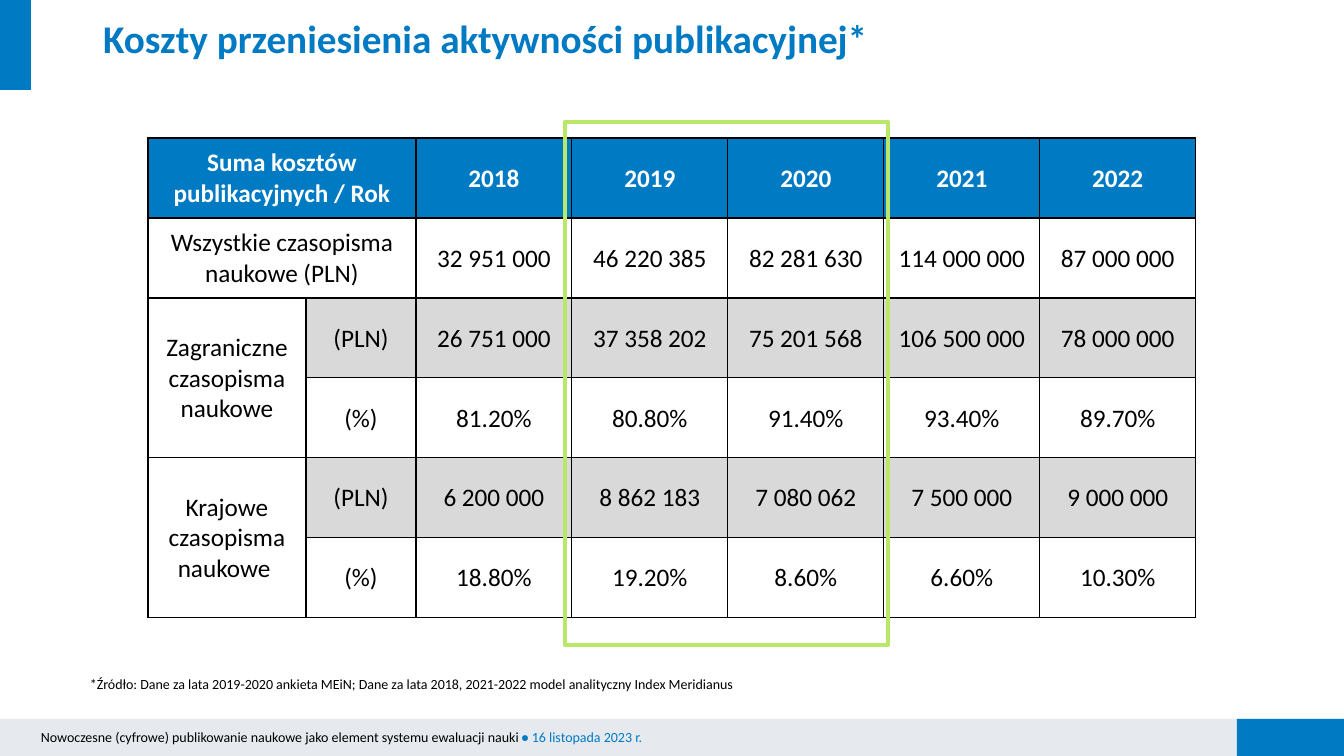
"""Builds a slide with a table of publication costs by year."""
from lxml import etree
from pptx import Presentation
from pptx.dml.color import RGBColor
from pptx.enum.shapes import MSO_SHAPE
from pptx.enum.text import MSO_ANCHOR, PP_ALIGN
from pptx.oxml.ns import qn
from pptx.util import Emu, Pt

RECTANGLE = MSO_SHAPE.RECTANGLE
TOP, MIDDLE = MSO_ANCHOR.TOP, MSO_ANCHOR.MIDDLE
LEFT, CENTER = PP_ALIGN.LEFT, PP_ALIGN.CENTER
EMU_PER_PX = 914400 / 100.8
FONT = "Calibri"
COLORS = {
    "blue": "007AC3",
    "bar": "E6EAEF",
    "band": "D9D9D9",
    "highlight": "BAE66A",
    "black": "000000",
    "white": "FFFFFF",
}
COLUMN_WIDTHS = [158, 110] + [156] * 5
ROW_HEIGHT = 80
ROWS = [
    ["Suma kosztów publikacyjnych / Rok", None, "2018", "2019", "2020", "2021", "2022"],
    ["Wszystkie czasopisma naukowe (PLN)", None,
     "32 951 000", "46 220 385", "82 281 630", "114 000 000", "87 000 000"],
    ["Zagraniczne czasopisma naukowe", "(PLN)",
     "26 751 000", "37 358 202", "75 201 568", "106 500 000", "78 000 000"],
    [None, "(%)", "81.20%", "80.80%", "91.40%", "93.40%", "89.70%"],
    ["Krajowe czasopisma naukowe ", "(PLN)",
     "6 200 000", "8 862 183", "7 080 062", "7 500 000", "9 000 000"],
    [None, "(%)", "18.80%", "19.20%", "8.60%", "6.60%", "10.30%"],
]
MERGES = [((0, 0), (0, 1)), ((1, 0), (1, 1)), ((2, 0), (3, 0)), ((4, 0), (5, 0))]


def px(value):
    return Emu(round(value * EMU_PER_PX))


def color(name):
    return RGBColor.from_string(COLORS[name])


def add_span(para, text, size, color_name, bold=False):
    span = para.add_run()
    span.text = text
    span.font.name = FONT
    span.font.size = Pt(size)
    span.font.bold = bold
    span.font.color.rgb = color(color_name)


def add_rectangle(page, left, top, width, height, fill=None, line=None):
    box = page.shapes.add_shape(RECTANGLE, px(left), px(top), px(width), px(height))
    box.shadow.inherit = False
    if fill:
        box.fill.solid()
        box.fill.fore_color.rgb = color(fill)
    else:
        box.fill.background()
    if line:
        box.line.color.rgb = color(line)
        box.line.width = Pt(3)
    else:
        box.line.fill.background()


def add_text(page, left, top, width, height, spans, line_spacing=1.0):
    box = page.shapes.add_textbox(px(left), px(top), px(width), px(height))
    box.text_frame.word_wrap = True
    para = box.text_frame.paragraphs[0]
    para.line_spacing = line_spacing
    for span in spans:
        add_span(para, *span)


def set_title(page, text):
    title = page.shapes.title
    title.left, title.top, title.width, title.height = map(px, (93, 15, 1251, 96))
    title.text_frame.vertical_anchor = TOP
    para = title.text_frame.paragraphs[0]
    para.alignment = LEFT
    para.line_spacing = 0.9
    add_span(para, text, 28, "blue", True)


def set_borders(cell):
    properties = cell._tc.get_or_add_tcPr()
    for index, side in enumerate(("lnL", "lnR", "lnT", "lnB")):
        border = etree.Element(qn(f"a:{side}"), w=str(Pt(1)))
        fill = etree.SubElement(border, qn("a:solidFill"))
        etree.SubElement(fill, qn("a:srgbClr"), val=COLORS["black"])
        properties.insert(index, border)


def format_cell(cell, text, fill, text_color, bold):
    cell.vertical_anchor = MIDDLE
    cell.margin_left = cell.margin_right = cell.margin_top = px(1)
    cell.margin_bottom = 0
    if fill:
        cell.fill.solid()
        cell.fill.fore_color.rgb = color(fill)
    else:
        cell.fill.background()
    set_borders(cell)
    if text:
        para = cell.text_frame.paragraphs[0]
        para.alignment = CENTER
        add_span(para, text, 18, text_color, bold)


def add_cost_table(page, left, top):
    frame = page.shapes.add_table(
        len(ROWS), len(COLUMN_WIDTHS), px(left), px(top),
        px(sum(COLUMN_WIDTHS)), px(ROW_HEIGHT * len(ROWS)))
    table = frame.table
    table.horz_banding = False
    table.first_row = False
    for column, width in zip(table.columns, COLUMN_WIDTHS):
        column.width = px(width)
    for first, last in MERGES:
        table.cell(*first).merge(table.cell(*last))
    for row_index, texts in enumerate(ROWS):
        table.rows[row_index].height = px(ROW_HEIGHT)
        header = row_index == 0
        banded = texts[1] == "(PLN)"
        for column_index, text in enumerate(texts):
            fill = "blue" if header else "band" if banded and column_index else None
            format_cell(table.cell(row_index, column_index), text, fill,
                        "white" if header else "black", header)


def main():
    deck = Presentation()
    deck.slide_width, deck.slide_height = px(1344), px(756)
    page = deck.slides.add_slide(deck.slide_layouts[5])
    add_rectangle(page, 0, 719, 1344, 37, fill="bar")
    add_rectangle(page, 0, 0, 31, 90, fill="blue")
    add_rectangle(page, 1237, 719, 107, 37, fill="blue")
    add_text(page, 31, 724, 941, 27, [
        ("Nowoczesne (cyfrowe) publikowanie naukowe jako element systemu ewaluacji nauki ",
         10, "black"),
        ("• ", 10, "blue", True),
        ("16 listopada 2023 r.", 10, "blue"),
    ])
    add_text(page, 80, 662, 1145, 33, [
        ("*Źródło: Dane za lata 2019-2020 ankieta MEiN; "
         "Dane za lata 2018, 2021-2022 model analityczny Index Meridianus", 10, "black"),
    ], line_spacing=1.5)
    set_title(page, "Koszty przeniesienia aktywności publikacyjnej*")
    add_cost_table(page, 148, 138)
    add_rectangle(page, 565, 122, 323, 523, line="highlight")
    deck.save("out.pptx")


if __name__ == "__main__":
    main()
